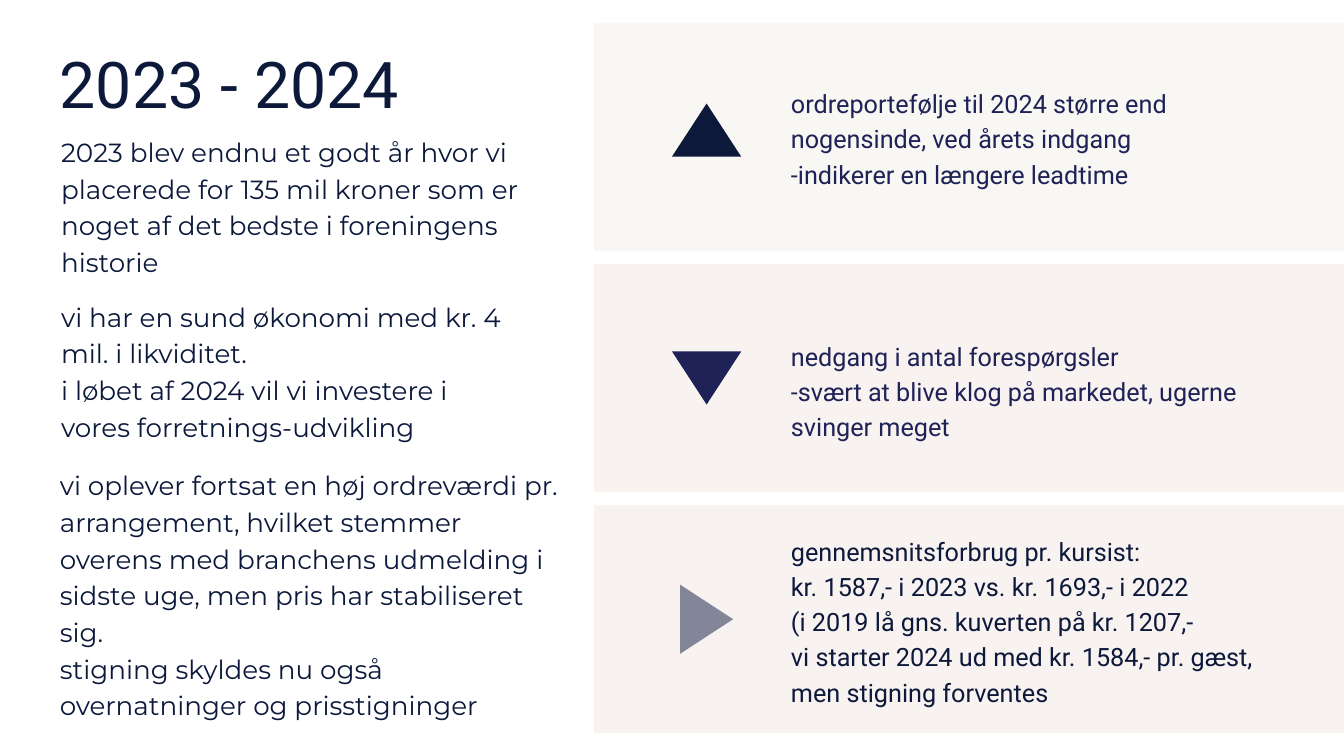
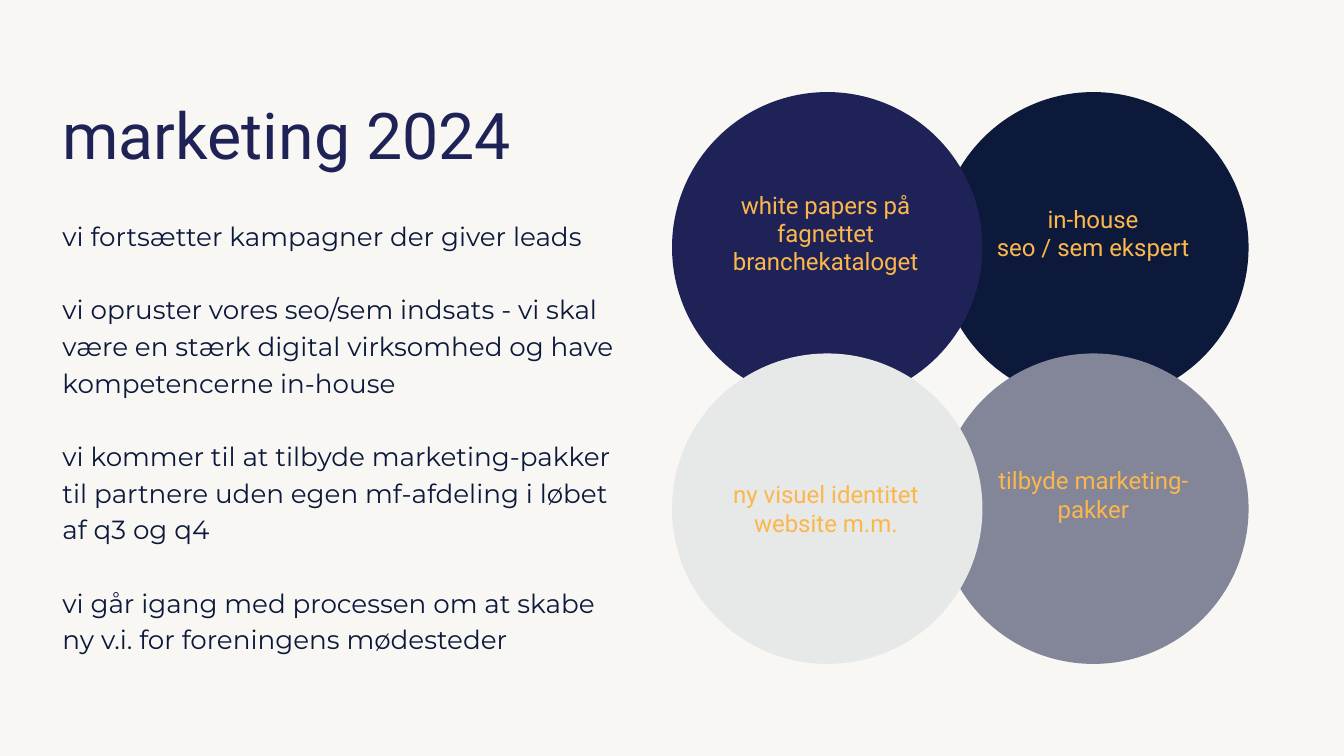
from dataclasses import dataclass

from pptx import Presentation
from pptx.dml.color import RGBColor
from pptx.enum.shapes import MSO_SHAPE
from pptx.enum.text import MSO_ANCHOR, PP_ALIGN
from pptx.util import Inches, Pt

RECTANGLE = MSO_SHAPE.RECTANGLE
TRIANGLE = MSO_SHAPE.ISOSCELES_TRIANGLE
OVAL = MSO_SHAPE.OVAL
TOP = MSO_ANCHOR.TOP
LEFT = PP_ALIGN.LEFT
CENTER = PP_ALIGN.CENTER


@dataclass(frozen=True)
class TextStyle:
    font: str
    size: float
    line: float
    align: int = LEFT


@dataclass(frozen=True)
class Theme:
    navy: str = "0C193B"
    indigo: str = "1E2256"
    slate: str = "838599"
    silver: str = "E7E8E8"
    amber: str = "FCB74C"
    white: str = "FFFFFF"
    ivory: str = "F8F7F4"
    blush: str = "F8F2F0"
    title: TextStyle = TextStyle("Roboto", 69, 96.6)
    body: TextStyle = TextStyle("Montserrat", 28.1, 39.3)
    card: TextStyle = TextStyle("Roboto", 27, 37.8)
    circle: TextStyle = TextStyle("Roboto", 25.7, 30.3, CENTER)


THEME = Theme()


def add_slide(presentation, background):
    slide = presentation.slides.add_slide(presentation.slide_layouts[6])
    fill = slide.background.fill
    fill.solid()
    fill.fore_color.rgb = RGBColor.from_string(background)
    return slide


def add_figure(slide, kind, box, color, rotation=0):
    shape = slide.shapes.add_shape(kind, *map(Inches, box))
    shape.shadow.inherit = False
    shape.fill.solid()
    shape.fill.fore_color.rgb = RGBColor.from_string(color)
    shape.line.fill.background()
    shape.rotation = rotation


def add_text(slide, box, lines, style, color, gap=0):
    frame = slide.shapes.add_textbox(*map(Inches, box)).text_frame
    frame.word_wrap = True
    frame.vertical_anchor = TOP
    frame.margin_left = frame.margin_right = 0
    frame.margin_top = frame.margin_bottom = 0
    for index, line in enumerate(lines):
        paragraph = frame.add_paragraph() if index else frame.paragraphs[0]
        paragraph.alignment = style.align
        paragraph.line_spacing = Pt(style.line)
        paragraph.space_before = Pt(gap if index else 0)
        run = paragraph.add_run()
        run.text = line
        run.font.name = style.font
        run.font.size = Pt(style.size)
        run.font.color.rgb = RGBColor.from_string(color)


def add_title(slide, box, text, color):
    add_text(slide, box, [text], THEME.title, color)


def add_trend_card(slide, box, card):
    left, top, width, height = box
    background, arrow_color, rotation, arrow_top, text_top, text_color, lines = card
    add_figure(slide, RECTANGLE, box, background)
    arrow_box = (left + 1.16, top + arrow_top, 1.03, 0.79)
    add_figure(slide, TRIANGLE, arrow_box, arrow_color, rotation)
    text_box = (left + 2.93, top + text_top, width - 4.05, height - 2 * text_top)
    add_text(slide, text_box, lines, THEME.card, text_color)


def add_trend_cards(slide, box, cards, gap):
    left, top, width, height = box
    card_height = (height - gap * (len(cards) - 1)) / len(cards)
    for index, card in enumerate(cards):
        card_top = top + index * (card_height + gap)
        add_trend_card(slide, (left, card_top, width, card_height), card)


def add_circle_cluster(slide, box, circles, diameter):
    left, top, width, height = box
    column_step, row_step = width - diameter, height - diameter
    for column, row, color, _, _ in circles:
        circle_box = (left + column * column_step, top + row * row_step, diameter, diameter)
        add_figure(slide, OVAL, circle_box, color)
    for column, row, _, label_box, lines in circles:
        label_left, label_top, label_width, label_height = label_box
        text_box = (left + column * column_step + label_left,
                    top + row * row_step + label_top, label_width, label_height)
        add_text(slide, text_box, lines, THEME.circle, THEME.amber)


def build_year_slide(presentation):
    slide = add_slide(presentation, THEME.white)
    cards = [
        (THEME.ivory, THEME.navy, 0, 1.2, 0.9, THEME.indigo,
         ["ordreportefølje til 2024 større end nogensinde, ved årets indgang",
          "-indikerer en længere leadtime"]),
        (THEME.blush, THEME.indigo, 180, 1.3, 1.07, THEME.indigo,
         ["nedgang i antal forespørgsler",
          "-svært at blive klog på markedet, ugerne svinger meget"]),
        (THEME.blush, THEME.slate, 90, 1.3, 0.38, THEME.navy,
         ["gennemsnitsforbrug pr. kursist:",
          "kr. 1587,- i 2023 vs. kr. 1693,- i 2022",
          "(i 2019 lå gns. kuverten på kr. 1207,-",
          "vi starter 2024 ud med kr. 1584,- pr. gæst, men stigning forventes"]),
    ]
    add_trend_cards(slide, (8.84, 0.34, 11.16, 10.57), cards, 0.2)
    add_title(slide, (0.89, 0.46, 5.73, 1.29), "2023 - 2024", THEME.navy)
    stories = [
        ((0.91, 1.95, 7.53, 2.14),
         ["2023 blev endnu et godt år hvor vi placerede for 135 mil kroner som er "
          "noget af det bedste i foreningens historie"]),
        ((0.91, 4.4, 6.74, 2.14),
         ["vi har en sund økonomi med kr. 4 mil. i likviditet.",
          "i løbet af 2024 vil vi investere i vores forretnings-udvikling"]),
        ((0.89, 6.91, 7.55, 3.77),
         ["vi oplever fortsat en høj ordreværdi pr. arrangement, hvilket stemmer "
          "overens med branchens udmelding i sidste uge, men pris har stabiliseret sig.",
          "stigning skyldes nu også overnatninger og prisstigninger"]),
    ]
    for box, lines in stories:
        add_text(slide, box, lines, THEME.body, THEME.navy)


def build_marketing_slide(presentation):
    slide = add_slide(presentation, THEME.ivory)
    circles = [
        (1, 0, THEME.navy, (0.61, 1.68, 3.39, 0.84), ["in-house", "seo / sem ekspert"]),
        (1, 1, THEME.slate, (0.74, 1.68, 3.14, 1.25), ["tilbyde marketing-pakker"]),
        (0, 0, THEME.indigo, (0.61, 1.47, 3.35, 1.25),
         ["white papers på fagnettet", "branchekataloget"]),
        (0, 1, THEME.silver, (0.66, 1.89, 3.26, 0.84),
         ["ny visuel identitet", "website m.m."]),
    ]
    add_circle_cluster(slide, (10, 1.37, 8.58, 8.51), circles, 4.62)
    add_title(slide, (0.93, 1.22, 7.49, 1.29), "marketing 2024", THEME.indigo)
    plans = [
        "vi fortsætter kampagner der giver leads",
        "vi opruster vores seo/sem indsats - vi skal være en stærk digital virksomhed "
        "og have kompetencerne in-house",
        "vi kommer til at tilbyde marketing-pakker til partnere uden egen mf-afdeling "
        "i løbet af q3 og q4",
        "vi går igang med processen om at skabe ny v.i. for foreningens mødesteder",
    ]
    add_text(slide, (0.93, 3.2, 8.32, 6.47), plans, THEME.body, THEME.navy,
             gap=THEME.body.line)


def main():
    presentation = Presentation()
    presentation.slide_width = Inches(20)
    presentation.slide_height = Inches(11.25)
    build_year_slide(presentation)
    build_marketing_slide(presentation)
    presentation.save("out.pptx")


if __name__ == "__main__":
    main()
